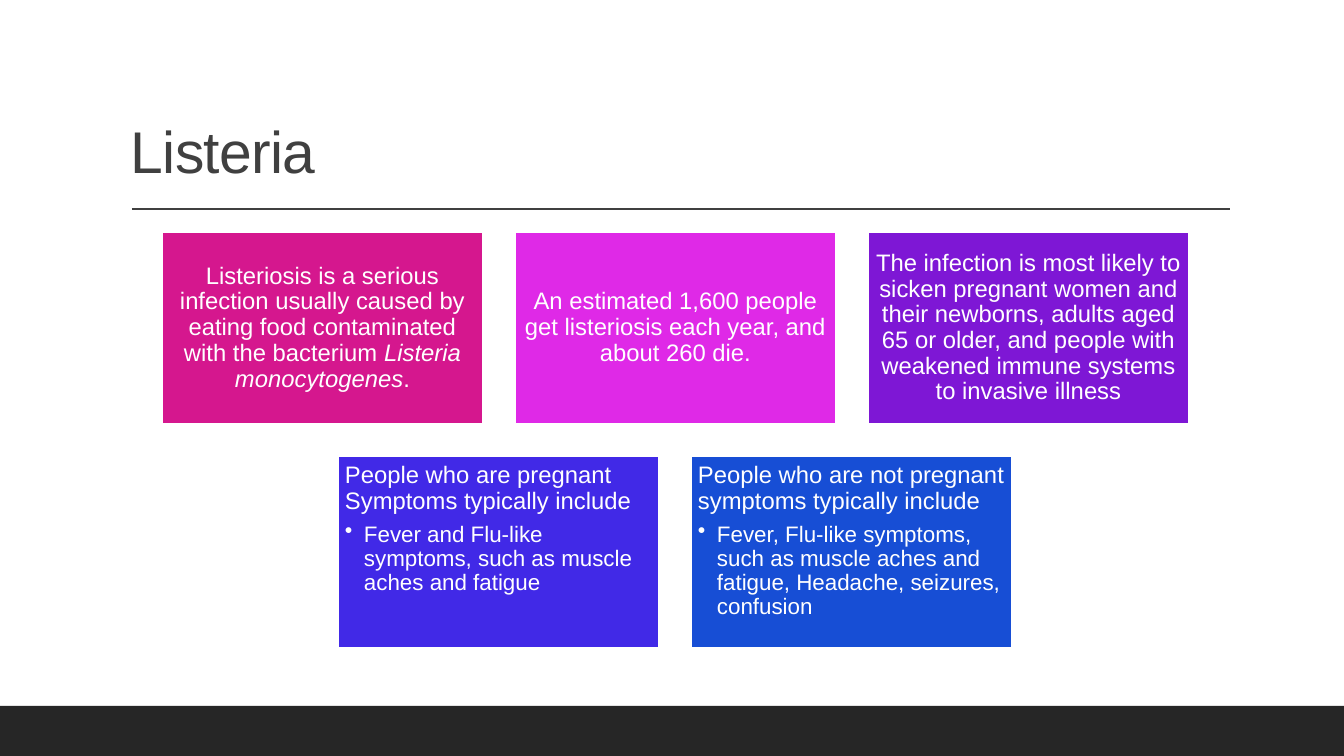
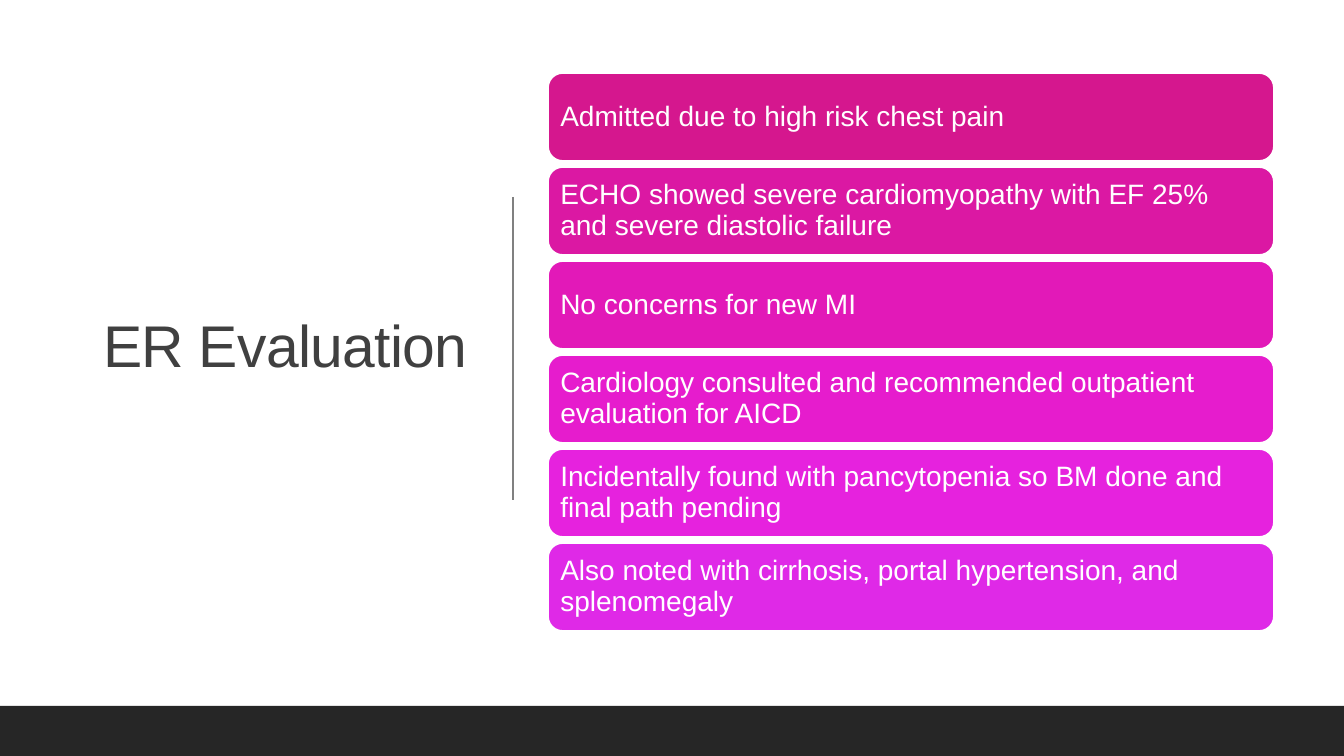
from pptx import Presentation
from pptx.dml.color import RGBColor
from pptx.enum.shapes import MSO_CONNECTOR, MSO_SHAPE as Shape
from pptx.enum.text import MSO_ANCHOR as Anchor, PP_ALIGN as Align
from pptx.oxml.ns import qn
from pptx.util import Emu, Pt
from lxml.etree import SubElement

SLIDE_WIDTH, SLIDE_HEIGHT = 1344, 756
EMU_PER_PX = 914400 / 100.8
FOOTER_HEIGHT = 50
FONT = "Arial"

WHITE = RGBColor(0xFF, 0xFF, 0xFF)
DARK = RGBColor(0x40, 0x40, 0x40)
GRAY = RGBColor(0x80, 0x80, 0x80)
FOOTER = RGBColor(0x26, 0x26, 0x26)
PINK = RGBColor(0xD5, 0x17, 0x8E)
MAGENTA = RGBColor(0xDF, 0x29, 0xE7)
PURPLE = RGBColor(0x7E, 0x17, 0xD5)
INDIGO = RGBColor(0x41, 0x29, 0xE7)
BLUE = RGBColor(0x17, 0x4E, 0xD5)

FACT_CARDS = [
    (PINK, "Listeriosis is a serious infection usually caused by eating food "
           "contaminated with the bacterium *Listeria monocytogenes*."),
    (MAGENTA, "An estimated 1,600 people get listeriosis each year, and about 260 die."),
    (PURPLE, "The infection is most likely to sicken pregnant women and their newborns, "
             "adults aged 65 or older, and people with weakened immune systems "
             "to invasive illness"),
]
SYMPTOM_CARDS = [
    (INDIGO, "People who are pregnant Symptoms typically include",
     "Fever and Flu-like symptoms, such as muscle aches and fatigue"),
    (BLUE, "People who are not pregnant symptoms typically include",
     "Fever, Flu-like symptoms, such as muscle aches and fatigue, Headache, "
     "seizures, confusion"),
]
FINDINGS = [
    (PINK, "Admitted due to high risk chest pain"),
    (RGBColor(0xDB, 0x18, 0xA3),
     "ECHO showed severe cardiomyopathy with EF 25% and severe diastolic failure"),
    (RGBColor(0xE2, 0x19, 0xB8), "No concerns for new MI"),
    (RGBColor(0xE6, 0x1C, 0xCD),
     "Cardiology consulted and recommended outpatient evaluation for AICD"),
    (RGBColor(0xE6, 0x22, 0xDE),
     "Incidentally found with pancytopenia so BM done and final path pending"),
    (MAGENTA, "Also noted with cirrhosis, portal hypertension, and splenomegaly"),
]


def px(length):
    return Emu(round(length * EMU_PER_PX))


def format_run(run, size, color):
    run.font.name = FONT
    run.font.size = Pt(size)
    run.font.color.rgb = color


def write_paragraph(paragraph, text, size, align=Align.LEFT):
    paragraph.alignment = align
    paragraph.line_spacing = 0.9
    for index, part in enumerate(text.split("*")):
        run = paragraph.add_run()
        run.text = part
        format_run(run, size, WHITE)
        run.font.italic = index % 2 == 1


def add_bullet(text_frame, text, size):
    text_frame.paragraphs[-1].space_after = Pt(6)
    paragraph = text_frame.add_paragraph()
    write_paragraph(paragraph, text, size)
    properties = paragraph._p.get_or_add_pPr()
    properties.set("marL", str(px(19)))
    properties.set("indent", str(-px(19)))
    SubElement(properties, qn("a:buChar")).set("char", "•")


def add_box(slide, kind, left, top, width, height, fill):
    shape = slide.shapes.add_shape(kind, px(left), px(top), px(width), px(height))
    shape.shadow.inherit = False
    shape.fill.solid()
    shape.fill.fore_color.rgb = fill
    shape.line.fill.background()
    return shape


def add_card(slide, kind, frame, fill, text, size, inset, align=Align.LEFT, anchor=Anchor.MIDDLE):
    shape = add_box(slide, kind, *frame, fill)
    shape.line.color.rgb = WHITE
    shape.line.width = Pt(1.25)
    text_frame = shape.text_frame
    text_frame.word_wrap = True
    text_frame.vertical_anchor = anchor
    text_frame.margin_left = text_frame.margin_right = px(inset)
    text_frame.margin_top = text_frame.margin_bottom = px(inset)
    write_paragraph(text_frame.paragraphs[0], text, size, align)
    return text_frame


def add_rule(slide, start_x, start_y, end_x, end_y, color):
    line = slide.shapes.add_connector(
        MSO_CONNECTOR.STRAIGHT, px(start_x), px(start_y), px(end_x), px(end_y))
    line.line.color.rgb = color
    line.line.width = Pt(1)
    SubElement(line._element.spPr, qn("a:effectLst"))


def add_title(slide, text, frame, anchor, align):
    text_frame = slide.shapes.add_textbox(*map(px, frame)).text_frame
    text_frame.word_wrap = True
    text_frame.vertical_anchor = anchor
    text_frame.text = text
    paragraph = text_frame.paragraphs[0]
    paragraph.alignment = align
    paragraph.line_spacing = 0.9
    run = paragraph.runs[0]
    format_run(run, 42, DARK)
    run._r.get_or_add_rPr().set("spc", "-50")


def add_slide(presentation):
    slide = presentation.slides.add_slide(presentation.slide_layouts[6])
    slide.background.fill.solid()
    slide.background.fill.fore_color.rgb = WHITE
    add_box(slide, Shape.RECTANGLE, 0, SLIDE_HEIGHT - FOOTER_HEIGHT,
            SLIDE_WIDTH, FOOTER_HEIGHT, FOOTER)
    return slide


def centered_frames(count, top):
    width, height, gap, center = 321, 192, 32, 675
    left = center - (count * (width + gap) - gap) // 2
    return [(left + index * (width + gap), top, width, height) for index in range(count)]


def build_listeria(presentation):
    slide = add_slide(presentation)
    add_title(slide, "Listeria", (121, 31, 1109, 160), Anchor.BOTTOM, Align.LEFT)
    add_rule(slide, 132, 209, 1230, 209, DARK)
    for frame, (fill, text) in zip(centered_frames(len(FACT_CARDS), 232), FACT_CARDS):
        add_card(slide, Shape.RECTANGLE, frame, fill, text, 17, 7, Align.CENTER)
    for frame, (fill, heading, symptoms) in zip(
            centered_frames(len(SYMPTOM_CARDS), 456), SYMPTOM_CARDS):
        text_frame = add_card(slide, Shape.RECTANGLE, frame, fill, heading, 17, 7,
                              anchor=Anchor.TOP)
        add_bullet(text_frame, symptoms, 16)


def build_evaluation(presentation):
    slide = add_slide(presentation)
    add_title(slide, "ER Evaluation", (71, 70, 406, 557), Anchor.MIDDLE, Align.RIGHT)
    add_rule(slide, 513, 197, 513, 500, GRAY)
    for row, (fill, text) in enumerate(FINDINGS):
        frame = (548, 73 + row * 94, 726, 88)
        add_card(slide, Shape.ROUNDED_RECTANGLE, frame, fill, text, 20, 8)


def main():
    presentation = Presentation()
    presentation.slide_width = px(SLIDE_WIDTH)
    presentation.slide_height = px(SLIDE_HEIGHT)
    build_listeria(presentation)
    build_evaluation(presentation)
    presentation.save("out.pptx")


if __name__ == "__main__":
    main()
